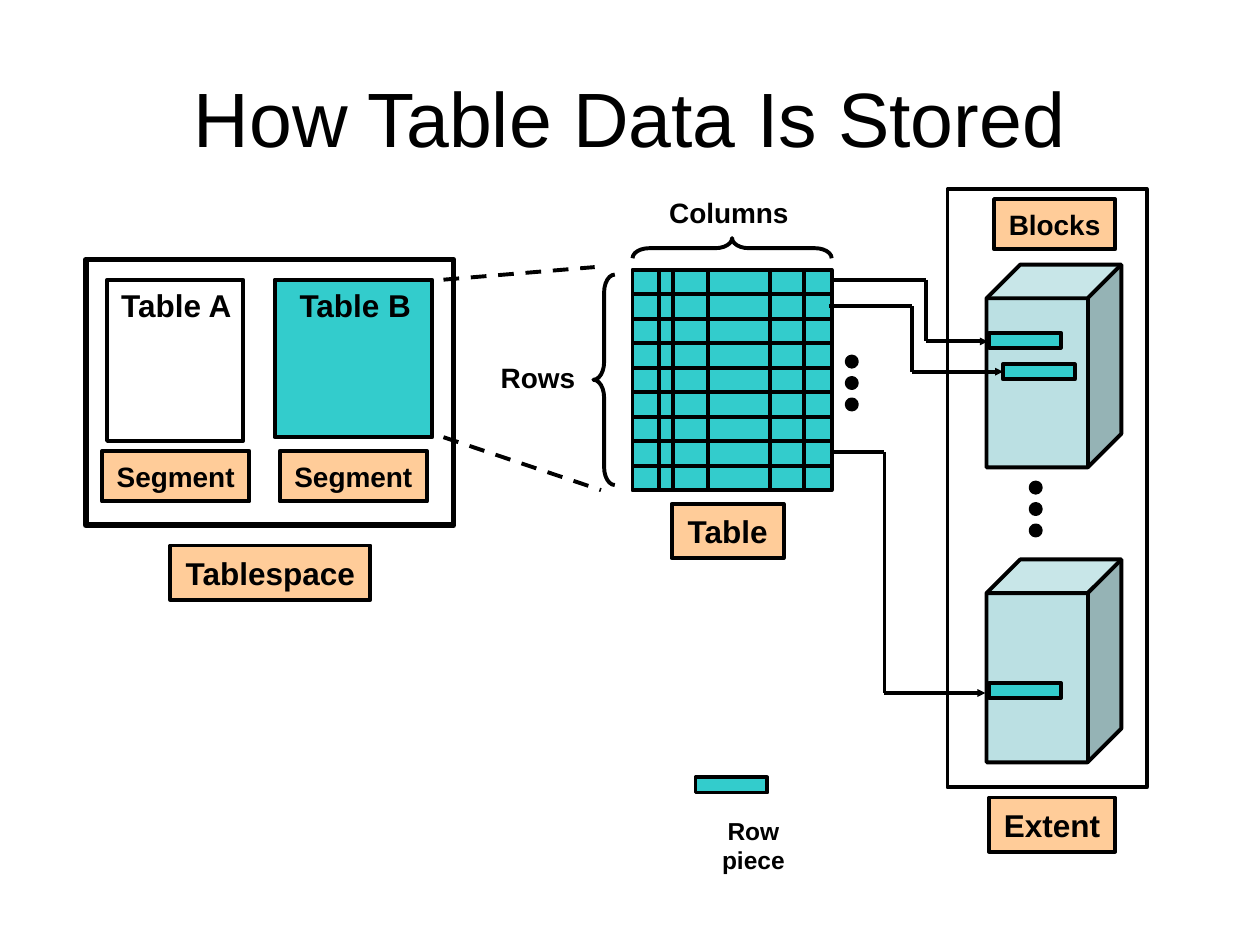
from dataclasses import dataclass

from lxml import etree
from pptx import Presentation
from pptx.dml.color import RGBColor
from pptx.enum.dml import MSO_LINE
from pptx.enum.shapes import MSO_CONNECTOR, MSO_SHAPE
from pptx.enum.text import MSO_ANCHOR, PP_ALIGN
from pptx.oxml.ns import qn
from pptx.util import Emu, Pt

RECT = MSO_SHAPE.RECTANGLE
CUBE = MSO_SHAPE.CUBE
OVAL = MSO_SHAPE.OVAL
BRACE = MSO_SHAPE.LEFT_BRACE
STRAIGHT = MSO_CONNECTOR.STRAIGHT
DASH = MSO_LINE.DASH
CENTER = PP_ALIGN.CENTER
MIDDLE = MSO_ANCHOR.MIDDLE
EMU_PER_PX = 9144
TITLE_ONLY = 5


@dataclass(frozen=True)
class Theme:
    font: str = "Arial"
    ink: RGBColor = RGBColor(0x00, 0x00, 0x00)
    label: RGBColor = RGBColor(0xFF, 0xCC, 0x99)
    data: RGBColor = RGBColor(0x33, 0xCC, 0xCC)
    block: RGBColor = RGBColor(0xBB, 0xE0, 0xE3)
    title: int = 44
    large: int = 18
    medium: int = 16
    small: int = 14
    stroke: float = 2.25
    heavy: float = 3.25


def px(*lengths):
    return [Emu(length * EMU_PER_PX) for length in lengths]


class Painter:
    def __init__(self, page, theme):
        self.page = page
        self.theme = theme

    def add_words(self, frame, text, size, bold=True):
        frame.vertical_anchor = MIDDLE
        para = frame.paragraphs[0]
        para.alignment = CENTER
        span = para.add_run()
        span.text = text
        span.font.name = self.theme.font
        span.font.size = Pt(size)
        span.font.bold = bold
        span.font.color.rgb = self.theme.ink

    def title(self, text, *place):
        box = self.page.shapes.title
        box.left, box.top, box.width, box.height = px(*place)
        self.add_words(box.text_frame, text, self.theme.title, bold=False)

    def shape(self, kind, *place, fill=None, stroke=None, adjust=()):
        box = self.page.shapes.add_shape(kind, *px(*place))
        box.shadow.inherit = False
        if fill is None:
            box.fill.background()
        else:
            box.fill.solid()
            box.fill.fore_color.rgb = fill
        box.line.color.rgb = self.theme.ink
        box.line.width = Pt(stroke or self.theme.stroke)
        for index, value in enumerate(adjust):
            box.adjustments[index] = value
        return box

    def label(self, text, size, *place):
        box = self.shape(RECT, *place, fill=self.theme.label)
        box.text_frame.word_wrap = False
        self.add_words(box.text_frame, text, size)

    def text(self, text, size, *place, wrap=False, inset=10):
        box = self.page.shapes.add_textbox(*px(*place))
        frame = box.text_frame
        frame.word_wrap = wrap
        frame.margin_left, frame.margin_right = px(inset, inset)
        self.add_words(frame, text, size)

    def line(self, *ends, dash=None, arrow=False):
        line = self.page.shapes.add_connector(STRAIGHT, *px(*ends))
        line.line.color.rgb = self.theme.ink
        line.line.width = Pt(self.theme.stroke)
        if dash:
            line.line.dash_style = dash
        properties = line._element.spPr
        if arrow:
            outline = properties.find(qn("a:ln"))
            etree.SubElement(outline, qn("a:tailEnd"), type="triangle", w="sm", len="sm")
        etree.SubElement(properties, qn("a:effectLst"))

    def route(self, *points):
        for index, (start, end) in enumerate(zip(points, points[1:])):
            self.line(*start, *end, arrow=index == len(points) - 2)

    def row_piece(self, left, top):
        self.shape(RECT, left, top, 57, 12, fill=self.theme.data)

    def dots(self, left, top):
        for index in range(3):
            self.shape(OVAL, left, top + 17 * index, 8, 8, fill=self.theme.ink)


def draw_tablespace(paint):
    theme = paint.theme
    paint.shape(RECT, 68, 206, 292, 211, stroke=theme.heavy)
    paint.shape(RECT, 85, 222, 108, 128)
    paint.shape(RECT, 218, 222, 125, 125, fill=theme.data)
    paint.text("Table A", theme.large, 85, 222, 110, 40)
    paint.text("Table B", theme.large, 227, 222, 110, 40)
    for left in (81, 222):
        paint.label("Segment", theme.medium, left, 358, 117, 40)
    paint.label("Tablespace", theme.large, 135, 433, 159, 43)
    paint.line(352, 222, 472, 212, dash=DASH)
    paint.line(352, 347, 477, 389, dash=DASH)


def draw_table(paint):
    theme = paint.theme
    left, top, width, height, rows = 502, 214, 158, 175, 9
    paint.shape(RECT, left, top, width, height, fill=theme.data)
    for row in range(1, rows):
        y = top + round(height * row / rows)
        paint.line(left, y, left + width, y)
    for x in (523, 534, 562, 611, 638):
        paint.line(x, top, x, top + height)
    paint.shape(BRACE, 471, 218, 17, 167, adjust=(0.83, 0.5))
    columns = paint.shape(BRACE, 573, 118, 16, 158, adjust=(0.83, 0.5))
    columns.rotation = 90
    paint.text("Rows", theme.medium, 377, 281, 100, 37)
    paint.text("Columns", theme.medium, 521, 150, 115, 37)
    paint.label("Table", theme.large, 533, 400, 89, 43)
    paint.dots(672, 283)
    paint.row_piece(552, 617)
    paint.text("Row piece", theme.small, 540, 642, 116, 58, wrap=True, inset=20)


def draw_extent(paint):
    theme = paint.theme
    paint.shape(RECT, 752, 150, 158, 475)
    paint.label("Blocks", theme.medium, 789, 158, 96, 40)
    paint.label("Extent", theme.large, 785, 633, 100, 43)
    for top in (210, 444):
        paint.shape(CUBE, 783, top, 107, 161, fill=theme.block, adjust=(0.25,))
    for left, top in ((785, 264), (796, 289), (785, 542)):
        paint.row_piece(left, top)
    paint.dots(818, 383)
    paint.route((660, 222), (735, 222), (735, 271), (784, 271))
    paint.route((658, 243), (724, 243), (724, 295), (796, 295))
    paint.route((660, 359), (702, 359), (702, 550), (782, 550))


def main():
    deck = Presentation()
    deck.slide_width, deck.slide_height = px(1000, 750)
    page = deck.slides.add_slide(deck.slide_layouts[TITLE_ONLY])
    paint = Painter(page, Theme())
    paint.title("How Table Data Is Stored", 50, 30, 900, 125)
    draw_tablespace(paint)
    draw_table(paint)
    draw_extent(paint)
    deck.save("out.pptx")


if __name__ == "__main__":
    main()
